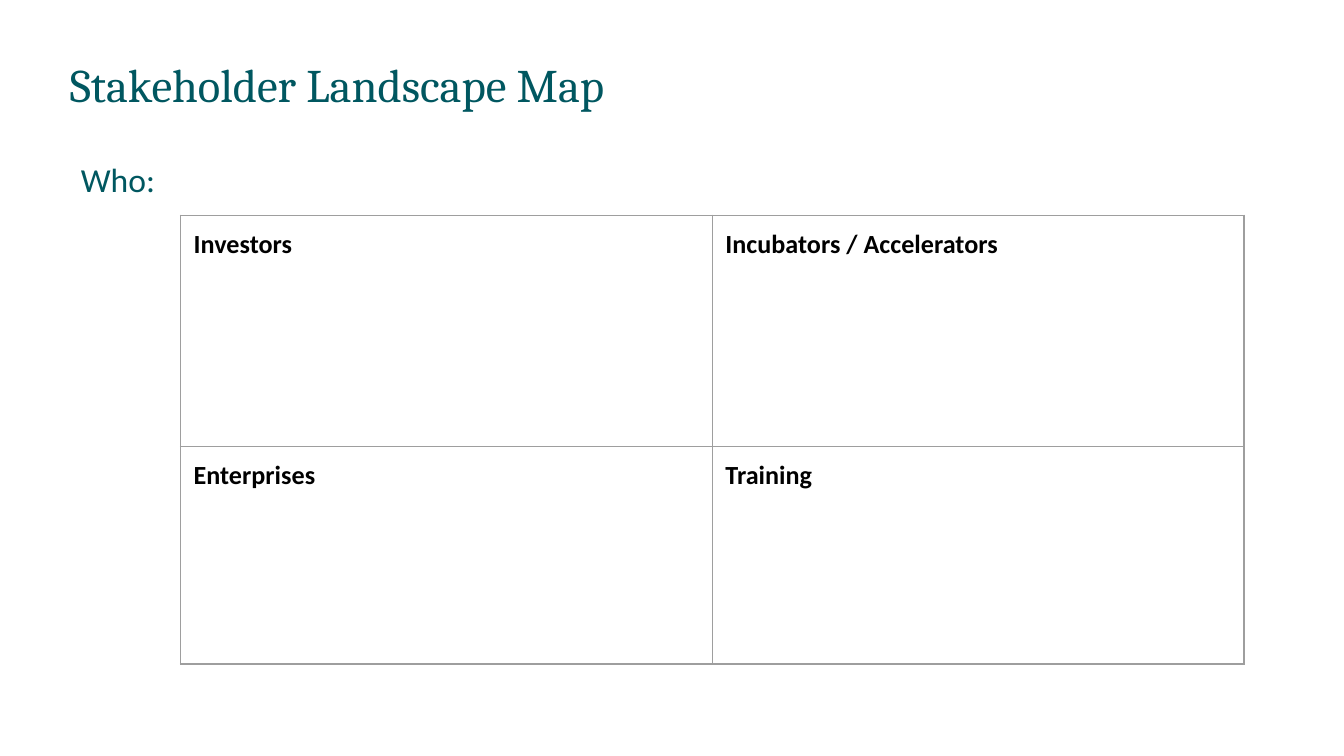
"""Build the stakeholder landscape map slide."""
from lxml.etree import SubElement
from pptx import Presentation
from pptx.dml.color import RGBColor
from pptx.oxml.ns import qn
from pptx.util import Cm, Pt

TEAL = RGBColor(0x00, 0x57, 0x60)
BLACK = RGBColor(0x00, 0x00, 0x00)
GREY = RGBColor(0x9E, 0x9E, 0x9E)
INSET = Cm(0.25)


def write(tf, text, font, size, color, bold=False):
    tf.word_wrap = True
    tf.text = text
    p = tf.paragraphs[0]
    r = p.runs[0]
    r.font.name = font
    r.font.size = Pt(size)
    r.font.color.rgb = color
    r.font.bold = bold
    return p


def set_insets(box):
    box.margin_left = box.margin_right = INSET
    box.margin_top = box.margin_bottom = INSET


prs = Presentation()
prs.slide_width = Cm(25.4)
prs.slide_height = Cm(14.29)
s = prs.slides.add_slide(prs.slide_layouts[6])

title = s.shapes.add_textbox(Cm(1.07), Cm(0.81), Cm(23.67), Cm(1.6))
set_insets(title.text_frame)
write(title.text_frame, "Stakeholder Landscape Map", "Cambria", 25, TEAL)

who = s.shapes.add_textbox(Cm(1.28), Cm(2.64), Cm(23.67), Cm(9.5))
set_insets(who.text_frame)
p = write(who.text_frame, "Who:", "Calibri", 18, TEAL)
p.line_spacing = 1.15
p.space_after = Pt(12)

groups = [
    ["Investors", "Incubators / Accelerators"],
    ["Enterprises", "Training"],
]
frame = s.shapes.add_table(2, 2, Cm(3.41), Cm(4.07), Cm(20.1), Cm(8.48))
table = frame.table
table.first_row = False
table.horz_banding = False
for col in table.columns:
    col.width = Cm(10.05)
for row, height, names in zip(table.rows, (4.37, 4.11), groups):
    row.height = Cm(height)
    for cell, name in zip(row.cells, names):
        set_insets(cell)
        write(cell.text_frame, name, "Calibri", 14, BLACK, True)
        tc_pr = cell._tc.get_or_add_tcPr()
        for side in ("a:lnL", "a:lnR", "a:lnT", "a:lnB"):
            ln = SubElement(tc_pr, qn(side), w=str(Pt(0.75)))
            fill = SubElement(ln, qn("a:solidFill"))
            SubElement(fill, qn("a:srgbClr"), val=str(GREY))
        cell.fill.background()

prs.save("out.pptx")
